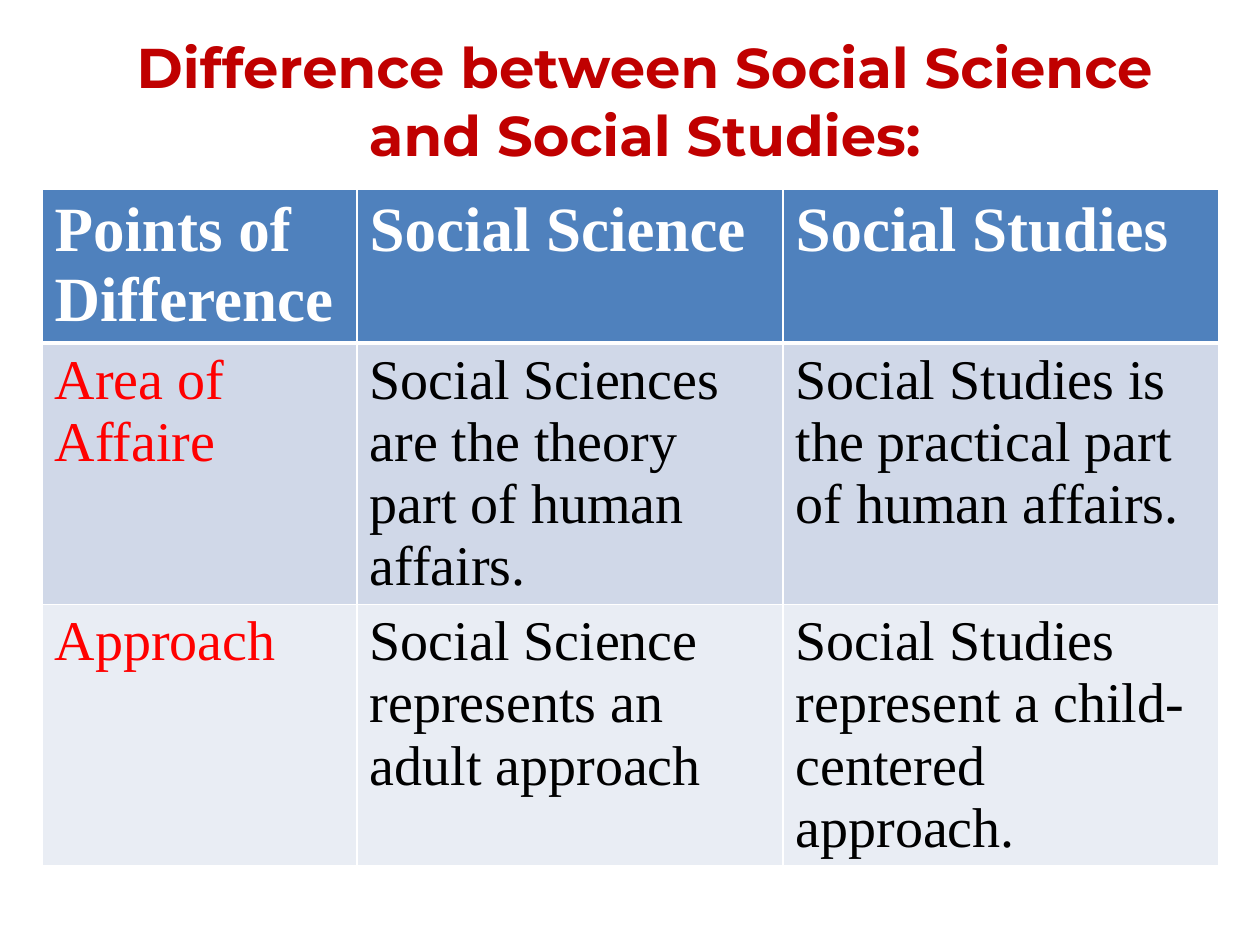
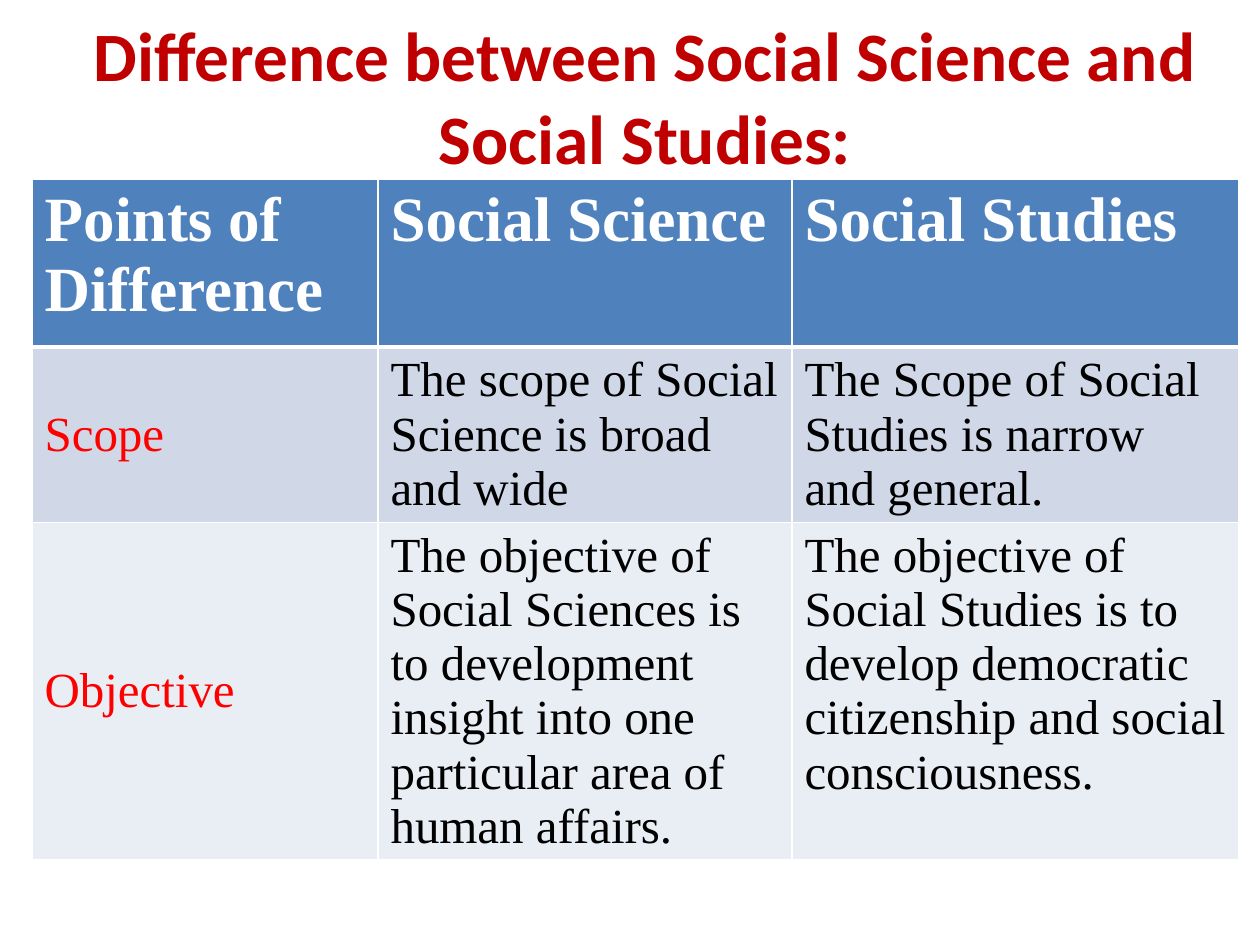
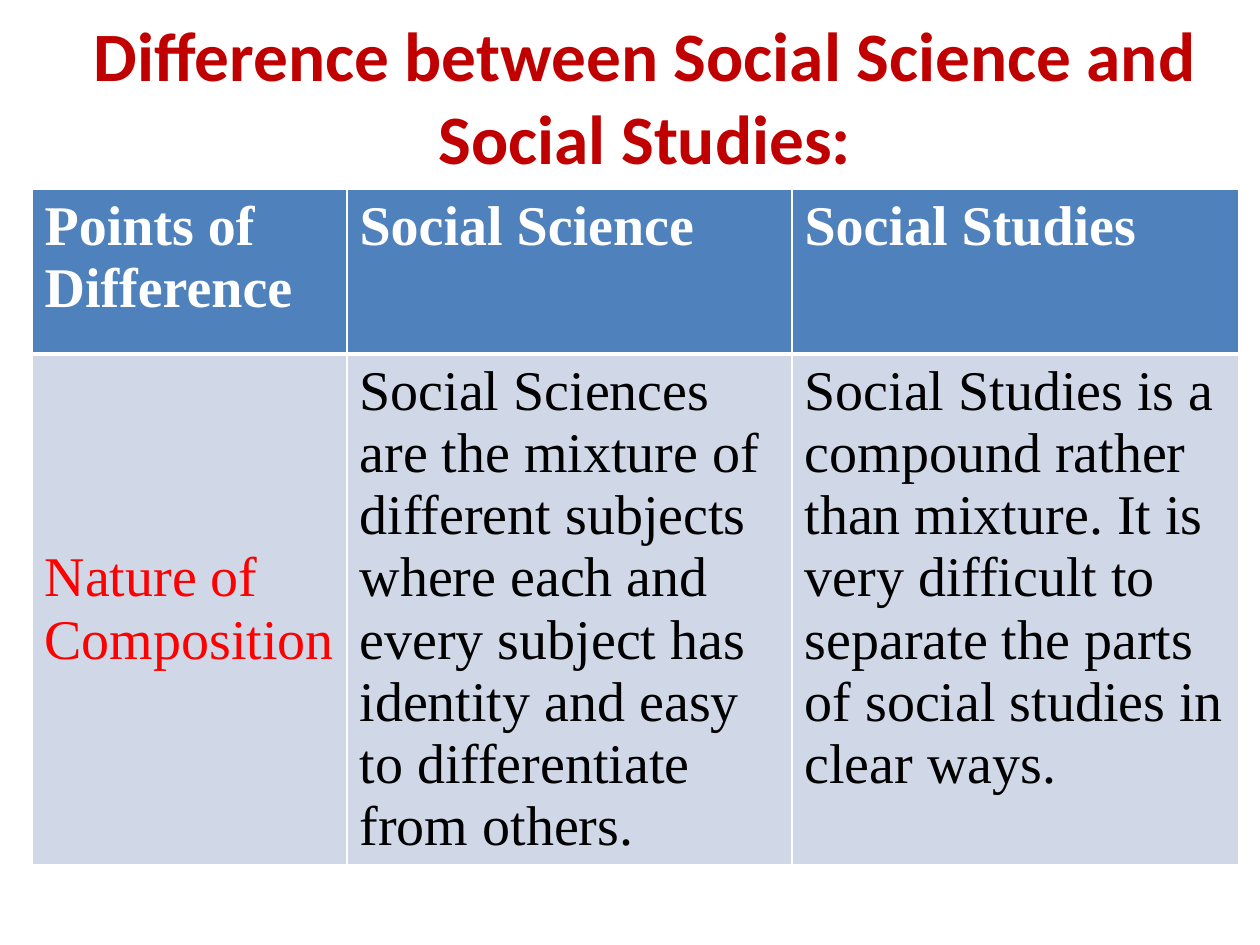
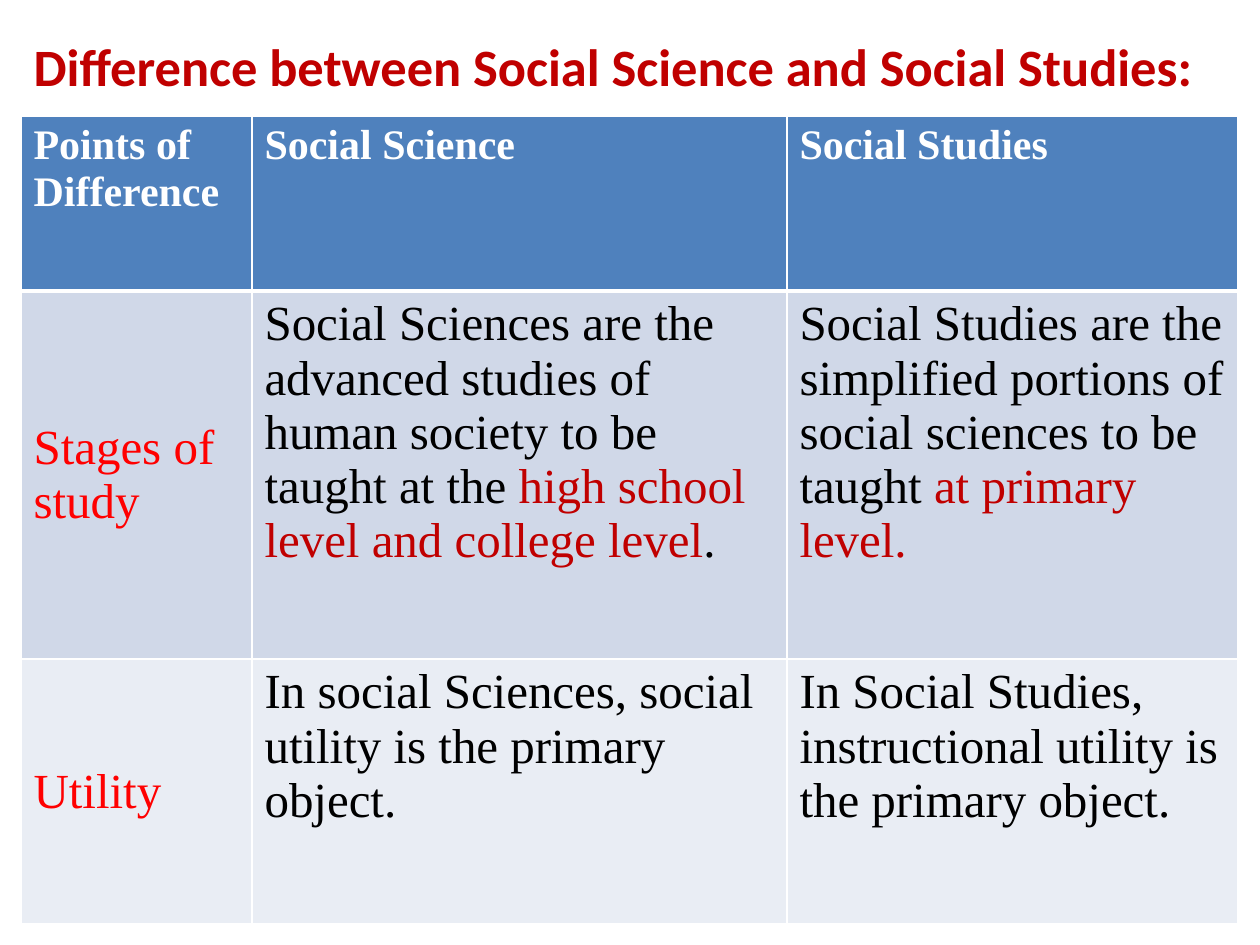
import pptx
import pptx.dml.color
import pptx.enum.text
import pptx.oxml
import pptx.oxml.ns
import pptx.util

RGBColor = pptx.dml.color.RGBColor
WHITE = RGBColor(0xFF, 0xFF, 0xFF)
BLACK = RGBColor(0x00, 0x00, 0x00)
RED = RGBColor(0xFF, 0x00, 0x00)
DARK_RED = RGBColor(0xC0, 0x00, 0x00)
HEADER_BLUE = RGBColor(0x4F, 0x81, 0xBD)
BANDS = [RGBColor(0xD0, 0xD8, 0xE8), RGBColor(0xE9, 0xED, 0xF4)]

MIDDLE = pptx.enum.text.MSO_ANCHOR.MIDDLE
TOP = pptx.enum.text.MSO_ANCHOR.TOP
LEFT = pptx.enum.text.PP_ALIGN.LEFT
CENTER = pptx.enum.text.PP_ALIGN.CENTER

PX = 914400 / 126
TITLE = "Difference between Social Science and Social Studies:"
HEADER = ["Points of Difference", "Social Science", "Social Studies"]
TABLE_FONT = "Times New Roman"

# A cell is a string, or a list of (text, colour) spans.
SLIDES = [
    dict(
        title_box=(73, 32, 1144, 136), title_font="Montserrat", title_size=32,
        title_align=CENTER, table_box=(42, 189, 1176, 727),
        columns=(315, 426, 436), rows=(154, 178, 233),
        header_size=36, body_size=32, label_anchor=TOP,
        body=[
            ["Area of Affaire",
             "Social Sciences are the theory part of human affairs.",
             "Social Studies is the practical part of human affairs."],
            ["Approach",
             "Social Science represents an adult approach",
             "Social Studies represent a child-centered approach."],
        ],
    ),
    dict(
        title_box=(73, 32, 1144, 126), title_font="Calibri", title_size=39.6,
        title_align=CENTER, table_box=(32, 179, 1207, 722),
        columns=(346, 414, 447), rows=(168, 91, 91),
        header_size=36, body_size=28, label_anchor=MIDDLE,
        body=[
            ["Scope",
             "The scope of Social Science is broad and wide",
             "The Scope of Social Studies is narrow and general."],
            ["Objective",
             "The objective of Social Sciences is to development insight into "
             "one particular area of human affairs.",
             "The objective of Social Studies is to develop democratic "
             "citizenship and social consciousness."],
        ],
    ),
    dict(
        title_box=(73, 32, 1144, 126), title_font="Calibri", title_size=39.6,
        title_align=CENTER, table_box=(32, 189, 1207, 716),
        columns=(315, 445, 447), rows=(165, 131),
        header_size=32, body_size=32, label_anchor=MIDDLE,
        body=[
            ["Nature of Composition",
             "Social Sciences are the mixture of different subjects where each "
             "and every subject has identity and easy to differentiate from others.",
             "Social Studies is a compound rather than mixture. It is very "
             "difficult to separate the parts of social studies in clear ways."],
        ],
    ),
    dict(
        title_box=(21, 32, 1207, 67), title_font="Calibri", title_size=30,
        title_align=LEFT, table_box=(21, 116, 1218, 806),
        columns=(231, 535, 451), rows=(175, 368, 265),
        header_size=24, body_size=28, label_anchor=MIDDLE,
        body=[
            ["Stages of study",
             [("Social Sciences are the advanced studies of human society to be "
               "taught at the ", BLACK),
              ("high school level and college level", DARK_RED),
              (".", BLACK)],
             [("Social Studies are the simplified portions of social sciences "
               "to be taught ", BLACK),
              ("at primary level.", DARK_RED)]],
            ["Utility",
             "In social Sciences, social utility is the primary object.",
             "In Social Studies, instructional utility is the primary object."],
        ],
    ),
]


def write(frame, text, *, font, size, color, bold=False, align=LEFT):
    """Fill the first paragraph; text is a string or (text, colour) spans."""
    para = frame.paragraphs[0]
    para.alignment = align
    for words, span_color in [(text, color)] if isinstance(text, str) else text:
        span = para.add_run()
        span.text = words
        span.font.name = font
        span.font.size = pptx.util.Pt(size)
        span.font.bold = bold
        span.font.color.rgb = span_color


def paint_cell(cell, color, bottom_width):
    """Give the cell white borders and a solid fill."""
    properties = cell._tc.get_or_add_tcPr()
    for side in "LRTB":
        width = pptx.util.Pt(bottom_width if side == "B" else 1)
        properties.append(pptx.oxml.parse_xml(
            f'<a:ln{side} {pptx.oxml.ns.nsdecls("a")} w="{width}"><a:solidFill>'
            f'<a:srgbClr val="{WHITE}"/></a:solidFill></a:ln{side}>'))
    cell.fill.solid()
    cell.fill.fore_color.rgb = color


deck = pptx.Presentation()
deck.slide_width = pptx.util.Inches(10)
deck.slide_height = pptx.util.Inches(7.5)

for content in SLIDES:
    page = deck.slides.add_slide(deck.slide_layouts[0])
    subtitle = page.placeholders[1].element
    subtitle.getparent().remove(subtitle)

    title = page.shapes.title
    title.left, title.top, title.width, title.height = [
        round(length * PX) for length in content["title_box"]]
    title.text_frame.vertical_anchor = MIDDLE
    title.text_frame.auto_size = pptx.enum.text.MSO_AUTO_SIZE.NONE
    write(title.text_frame, TITLE, font=content["title_font"],
          size=content["title_size"], color=DARK_RED, bold=True,
          align=content["title_align"])

    lines = [HEADER] + content["body"]
    box = page.shapes.add_table(
        len(lines), len(HEADER),
        *[round(length * PX) for length in content["table_box"]])
    table = box.table
    for column, width in zip(table.columns, content["columns"]):
        column.width = round(width * PX)
    for row, height in zip(table.rows, content["rows"]):
        row.height = round(height * PX)
    box.height = round(content["table_box"][3] * PX)

    for row_number, line in enumerate(lines):
        for column_number, text in enumerate(line):
            cell = table.cell(row_number, column_number)
            is_header = row_number == 0
            is_label = column_number == 0 and not is_header
            paint_cell(cell,
                       HEADER_BLUE if is_header else BANDS[(row_number - 1) % 2],
                       3 if is_header else 1)
            cell.vertical_anchor = content["label_anchor"] if is_label else TOP
            write(cell.text_frame, text, font=TABLE_FONT, bold=is_header,
                  size=content["header_size" if is_header else "body_size"],
                  color=WHITE if is_header else RED if is_label else BLACK)

deck.save("out.pptx")
